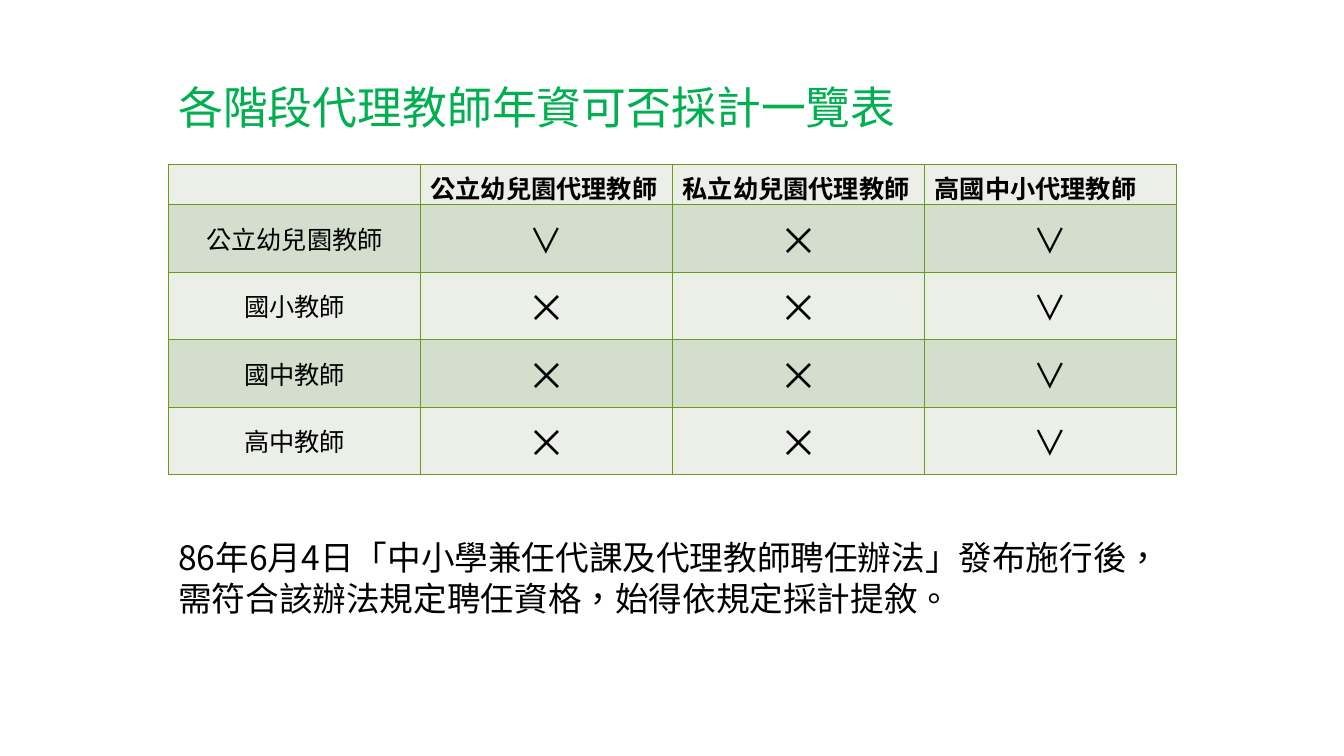
from dataclasses import dataclass

from pptx import Presentation
from pptx.dml.color import RGBColor
from pptx.enum.text import MSO_ANCHOR, PP_ALIGN
from pptx.oxml.ns import qn
from pptx.oxml.xmlchemy import OxmlElement
from pptx.slide import Slide
from pptx.table import _Cell
from pptx.text.text import _Paragraph
from pptx.util import Inches, Pt

MIDDLE, TOP = MSO_ANCHOR.MIDDLE, MSO_ANCHOR.TOP
LEFT, CENTER = PP_ALIGN.LEFT, PP_ALIGN.CENTER


@dataclass(frozen=True)
class Theme:
    title_font: str = "Noto Sans CJK JP"
    body_font: str = "Noto Sans CJK SC"
    title_color: str = "00B050"
    text_color: str = "000000"
    border_color: str = "69991D"
    light_band: str = "EBEFE8"
    dark_band: str = "D4DECD"
    title_size: int = 32
    mark_size: int = 24
    note_size: int = 24
    label_size: int = 18
    border_width: int = 1


@dataclass(frozen=True)
class TextStyle:
    size: int
    font: str
    color: str
    bold: bool = False


@dataclass(frozen=True)
class TextBlock:
    text: str
    left: float
    top: float
    width: float
    height: float
    style: TextStyle
    anchor: MSO_ANCHOR = TOP
    line_spacing: float = 1.0


THEME = Theme()
HEADER_STYLE = TextStyle(THEME.label_size, THEME.body_font, THEME.text_color, True)
LABEL_STYLE = TextStyle(THEME.label_size, THEME.body_font, THEME.text_color)
MARK_STYLE = TextStyle(THEME.mark_size, THEME.body_font, THEME.text_color)

TITLE = TextBlock(
    "各階段代理教師年資可否採計一覽表", 1.67, 0.76, 9.99, 0.67,
    TextStyle(THEME.title_size, THEME.title_font, THEME.title_color), MIDDLE, 0.9,
)
NOTE = TextBlock(
    "86年6月4日「中小學兼任代課及代理教師聘任辦法」發布施行後，"
    "需符合該辦法規定聘任資格，始得依規定採計提敘。",
    1.67, 5.28, 9.62, 0.91,
    TextStyle(THEME.note_size, THEME.body_font, THEME.text_color),
)

TABLE_LEFT, TABLE_TOP = 1.67, 1.63
COLUMN_WIDTH, HEADER_HEIGHT, ROW_HEIGHT = 2.5, 0.38, 0.67
YES, NO = "∨", "⨉"
ROWS = [
    ["", "公立幼兒園代理教師", "私立幼兒園代理教師", "高國中小代理教師"],
    ["公立幼兒園教師", YES, NO, YES],
    ["國小教師", NO, NO, YES],
    ["國中教師", NO, NO, YES],
    ["高中教師", NO, NO, YES],
]


def add_run(paragraph: _Paragraph, text: str, style: TextStyle) -> None:
    run = paragraph.add_run()
    run.text = text
    run.font.size = Pt(style.size)
    run.font.bold = style.bold
    run.font.color.rgb = RGBColor.from_string(style.color)
    run.font.name = style.font
    # East Asian typeface and language
    properties = run.font._element
    properties.set("lang", "zh-TW")
    east_asian = OxmlElement("a:ea")
    east_asian.set("typeface", style.font)
    properties.find(qn("a:latin")).addnext(east_asian)


def add_text_block(slide: Slide, block: TextBlock) -> None:
    shape = slide.shapes.add_textbox(
        Inches(block.left), Inches(block.top), Inches(block.width), Inches(block.height)
    )
    frame = shape.text_frame
    frame.word_wrap = True
    frame.vertical_anchor = block.anchor
    paragraph = frame.paragraphs[0]
    paragraph.line_spacing = block.line_spacing
    add_run(paragraph, block.text, block.style)


def add_borders(cell: _Cell) -> None:
    properties = cell._tc.get_or_add_tcPr()
    for tag in ("a:lnL", "a:lnR", "a:lnT", "a:lnB"):
        line = OxmlElement(tag)
        line.set("w", str(Pt(THEME.border_width)))
        fill = OxmlElement("a:solidFill")
        color = OxmlElement("a:srgbClr")
        color.set("val", THEME.border_color)
        fill.append(color)
        line.append(fill)
        properties.append(line)


def fill_cell(cell: _Cell, text: str, row: int, column: int) -> None:
    cell.vertical_anchor = MIDDLE
    add_borders(cell)
    cell.fill.solid()
    band = THEME.dark_band if row % 2 else THEME.light_band
    cell.fill.fore_color.rgb = RGBColor.from_string(band)
    if not text:
        return
    paragraph = cell.text_frame.paragraphs[0]
    paragraph.alignment = CENTER if row else LEFT
    if row == 0:
        style = HEADER_STYLE
    else:
        style = MARK_STYLE if column else LABEL_STYLE
    add_run(paragraph, text, style)


def add_seniority_table(slide: Slide) -> None:
    heights = [HEADER_HEIGHT] + [ROW_HEIGHT] * (len(ROWS) - 1)
    column_count = len(ROWS[0])
    table = slide.shapes.add_table(
        len(ROWS), column_count, Inches(TABLE_LEFT), Inches(TABLE_TOP),
        Inches(COLUMN_WIDTH * column_count), Inches(sum(heights)),
    ).table
    for column in table.columns:
        column.width = Inches(COLUMN_WIDTH)
    for row_index, (texts, height) in enumerate(zip(ROWS, heights)):
        table.rows[row_index].height = Inches(height)
        for column_index, text in enumerate(texts):
            fill_cell(table.cell(row_index, column_index), text, row_index, column_index)


def main() -> None:
    presentation = Presentation()
    presentation.slide_width = Inches(13.33)
    presentation.slide_height = Inches(7.5)
    slide = presentation.slides.add_slide(presentation.slide_layouts[6])

    # Title, table, then the note below it
    add_text_block(slide, TITLE)
    add_seniority_table(slide)
    add_text_block(slide, NOTE)
    presentation.save("out.pptx")


if __name__ == "__main__":
    main()
